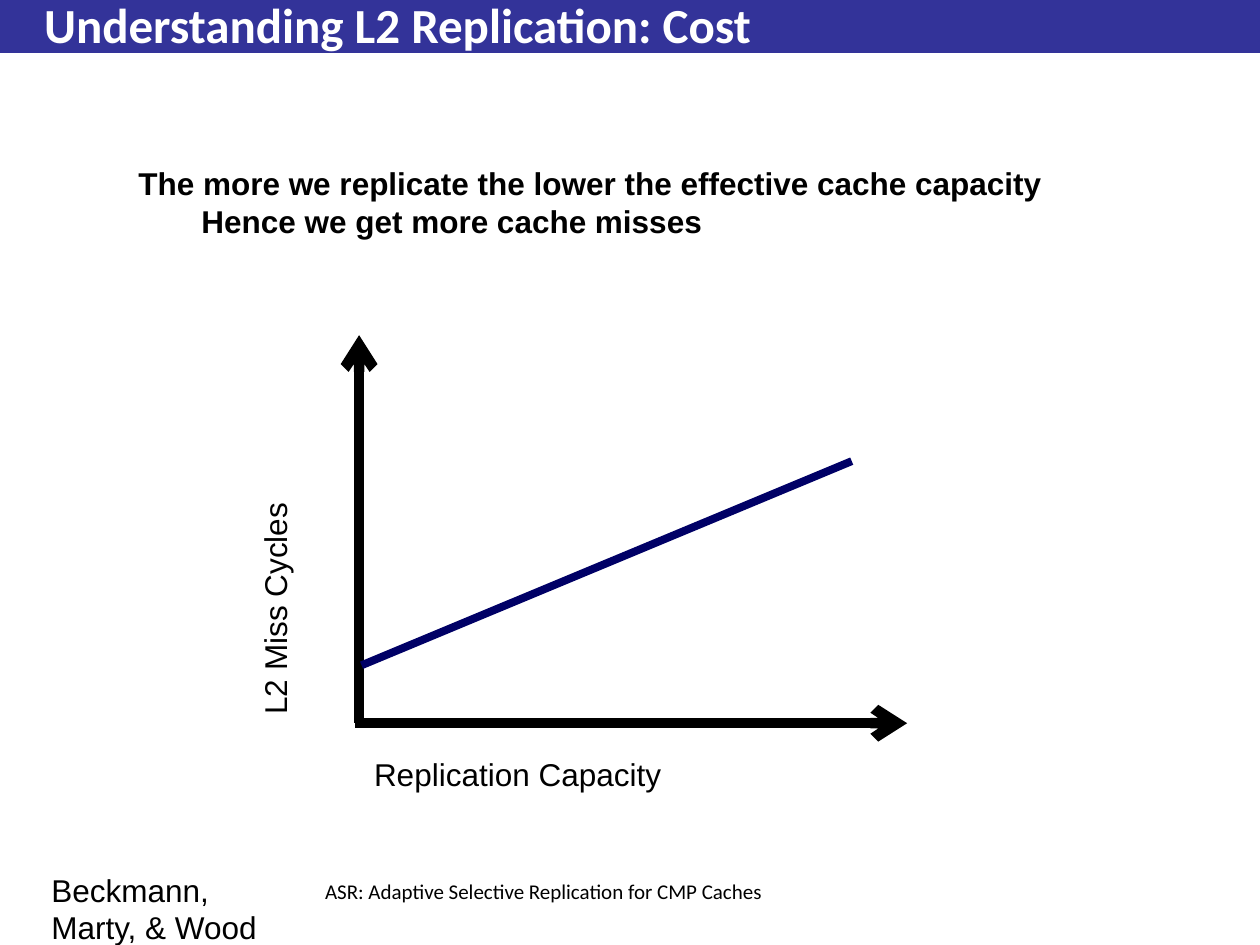
from pptx import Presentation
from pptx.dml.color import RGBColor
from pptx.enum.shapes import MSO_CONNECTOR, MSO_SHAPE
from pptx.enum.text import MSO_ANCHOR, PP_ALIGN
from pptx.oxml.ns import qn
from pptx.util import Inches, Pt
from lxml import etree

BANNER = RGBColor(0x33, 0x33, 0x99)
WHITE = RGBColor(0xFF, 0xFF, 0xFF)
BLACK = RGBColor(0, 0, 0)
CURVE = RGBColor(0, 0, 0x66)


def set_font(p, size, name="Arial", color=BLACK, bold=False):
    font = p.font
    font.size, font.name, font.bold = Pt(size), name, bold
    font.color.rgb = color


def add_text(s, text, x, y, w, h, size=18, name="Arial", bold=False):
    box = s.shapes.add_textbox(Inches(x), Inches(y), Inches(w), Inches(h))
    tf = box.text_frame
    tf.word_wrap = True
    tf.text = text
    for p in tf.paragraphs:
        set_font(p, size, name, bold=bold)
    return box


def add_line(s, x1, y1, x2, y2, color, width, arrow=False):
    """Draw a line; an arrow points at its first end."""
    line = s.shapes.add_connector(
        MSO_CONNECTOR.STRAIGHT, Inches(x1), Inches(y1), Inches(x2), Inches(y2))
    line.line.color.rgb = color
    line.line.width = Pt(width)
    if arrow:
        etree.SubElement(line.line._get_or_add_ln(), qn("a:headEnd"), type="arrow")
    etree.SubElement(line._element.spPr, qn("a:effectLst"))


def add_title(s, text, x, y, w, h):
    banner = s.shapes.add_shape(
        MSO_SHAPE.RECTANGLE, Inches(x), Inches(y), Inches(w), Inches(h))
    banner.shadow.inherit = False
    banner.fill.solid()
    banner.fill.fore_color.rgb = BANNER
    banner.line.fill.background()

    title = s.shapes.title
    title._element.addprevious(banner._element)
    title.left, title.top = Inches(x + 0.25), Inches(y + 0.05)
    title.width, title.height = Inches(w - 0.75), Inches(h - 0.14)
    tf = title.text_frame
    tf.text = text
    tf.vertical_anchor = MSO_ANCHOR.MIDDLE
    p = tf.paragraphs[0]
    p.alignment = PP_ALIGN.LEFT
    set_font(p, 28, "Calibri", WHITE, bold=True)


def add_cost_graph(s, x, y, w, h):
    """Draw the axes in the box, with their labels outside it."""
    bottom = y + h
    add_line(s, x, y, x, bottom, BLACK, 6, arrow=True)
    add_line(s, x + w, bottom, x - 0.03, bottom, BLACK, 6, arrow=True)
    label = add_text(s, "L2 Miss Cycles", x - 2.15, y + 1.2, 3.19, 0.63)
    label.rotation = 270
    add_text(s, "Replication Capacity", x + 0.02, bottom + 0.2, 4.25, 0.63)
    add_line(s, x + 0.02, bottom - 0.46, x + 3.91, y + 1, CURVE, 4.5)


def add_footer(s, x, y):
    add_text(s, "Beckmann, Marty, & Wood", x, y, 2.19, 0.52)
    paper = add_text(s, "ASR: Adaptive Selective Replication for CMP Caches",
                     x + 2.11, y - 0.03, 5.17, 0.52, 12, "Calibri")
    paper.text_frame.margin_left = Inches(0.16)
    paper.text_frame.margin_top = Inches(0.14)


def main():
    prs = Presentation()
    prs.slide_width, prs.slide_height = Inches(10), Inches(7.5)
    s = prs.slides.add_slide(prs.slide_layouts[5])
    add_title(s, "Understanding L2 Replication: Cost", 0, 0, 10, 0.42)
    add_footer(s, 0.31, 6.86)
    add_cost_graph(s, 2.85, 2.66, 4.35, 3.08)
    add_text(s, "The more we replicate the lower the effective cache capacity\n"
                "\tHence we get more cache misses", 1, 1.25, 7.59, 0.71, bold=True)
    prs.save("out.pptx")


if __name__ == "__main__":
    main()
